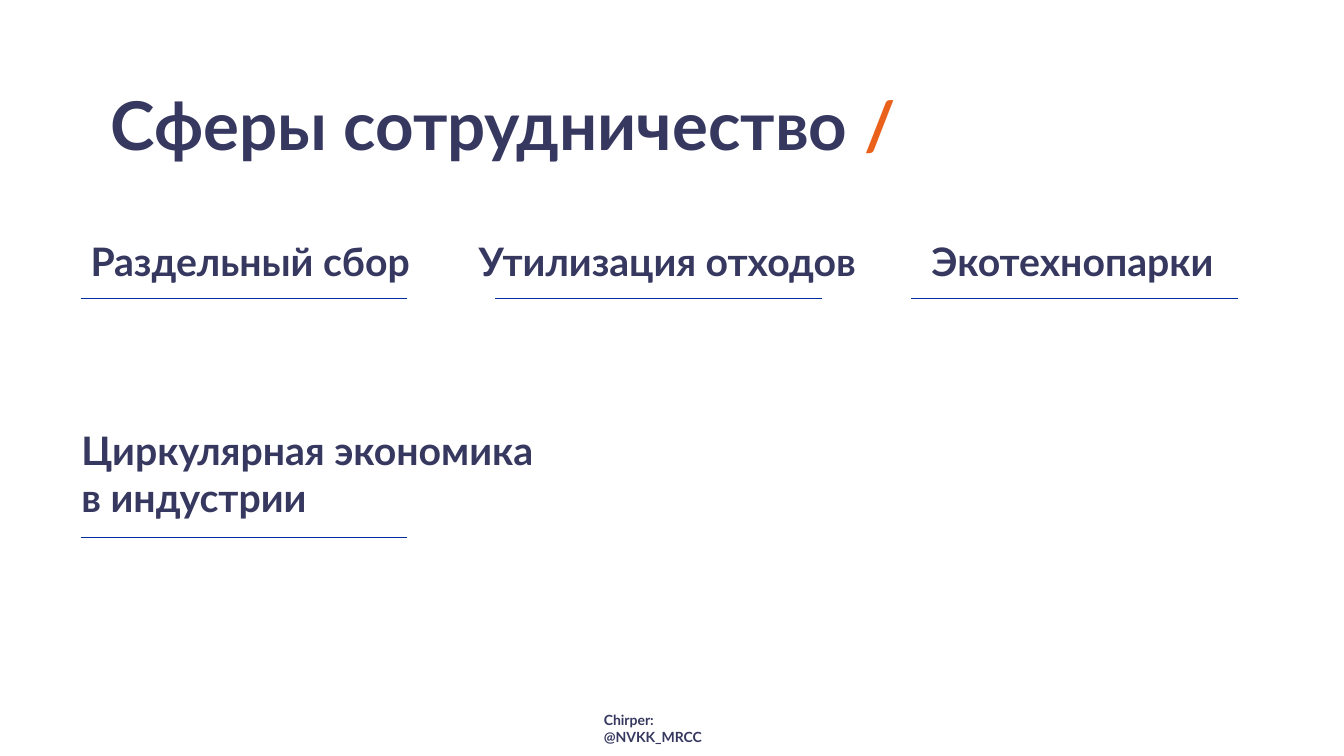
from pptx import Presentation
from pptx.dml.color import RGBColor as RGB
from pptx.enum.shapes import MSO_CONNECTOR as CONN
from pptx.enum.text import MSO_AUTO_SIZE as FIT
from pptx.oxml.ns import qn
from pptx.util import Pt

PX = 9144  # 100 px to the inch
COLORS = {"navy": "363860", "orange": "EA611C", "rule": "002EA2"}

prs = Presentation()
prs.slide_width, prs.slide_height = 1333 * PX, 750 * PX
s = prs.slides.add_slide(prs.slide_layouts[6])


def add_text(box, size, runs, fit=FIT.SHAPE_TO_FIT_TEXT):
    tf = s.shapes.add_textbox(*(v * PX for v in box)).text_frame
    tf.word_wrap = True
    tf.auto_size = fit
    p = tf.paragraphs[0]
    for text, color in runs:
        r = p.add_run()
        r.text = text
        for name, value in {"name": "Lato", "size": Pt(size), "bold": True}.items():
            setattr(r.font, name, value)
        r.font.color.rgb = RGB.from_string(COLORS[color])


# Footer
add_text((589, 701, 155, 31), 10, [("Chirper: @NVKK_MRCC", "navy")], FIT.NONE)

# Title
add_text((100, 78, 1001, 91), 48,
         [("Сферы сотрудничество ", "navy"), ("/", "orange")])

# Areas of cooperation: text, box, start of the rule below
AREAS = [
    ("Раздельный сбор", (80, 231, 340, 57), (80, 296)),
    ("Утилизация отходов", (465, 231, 404, 57), (491, 296)),
    ("Экотехнопарки", (914, 231, 340, 57), (904, 296)),
    ("Циркулярная экономика в индустрии", (71, 418, 479, 104), (80, 533)),
]
RULE_W = 324
for text, box, (x, y) in AREAS:
    add_text(box, 28, [(text, "navy")])
    rule = s.shapes.add_connector(CONN.STRAIGHT, x * PX, y * PX, (x + RULE_W) * PX, y * PX)
    rule.line.color.rgb = RGB.from_string(COLORS["rule"])
    rule.line.width = Pt(1)
    sp_pr = rule._element.spPr
    sp_pr.append(sp_pr.makeelement(qn("a:effectLst"), {}))

prs.save("out.pptx")
